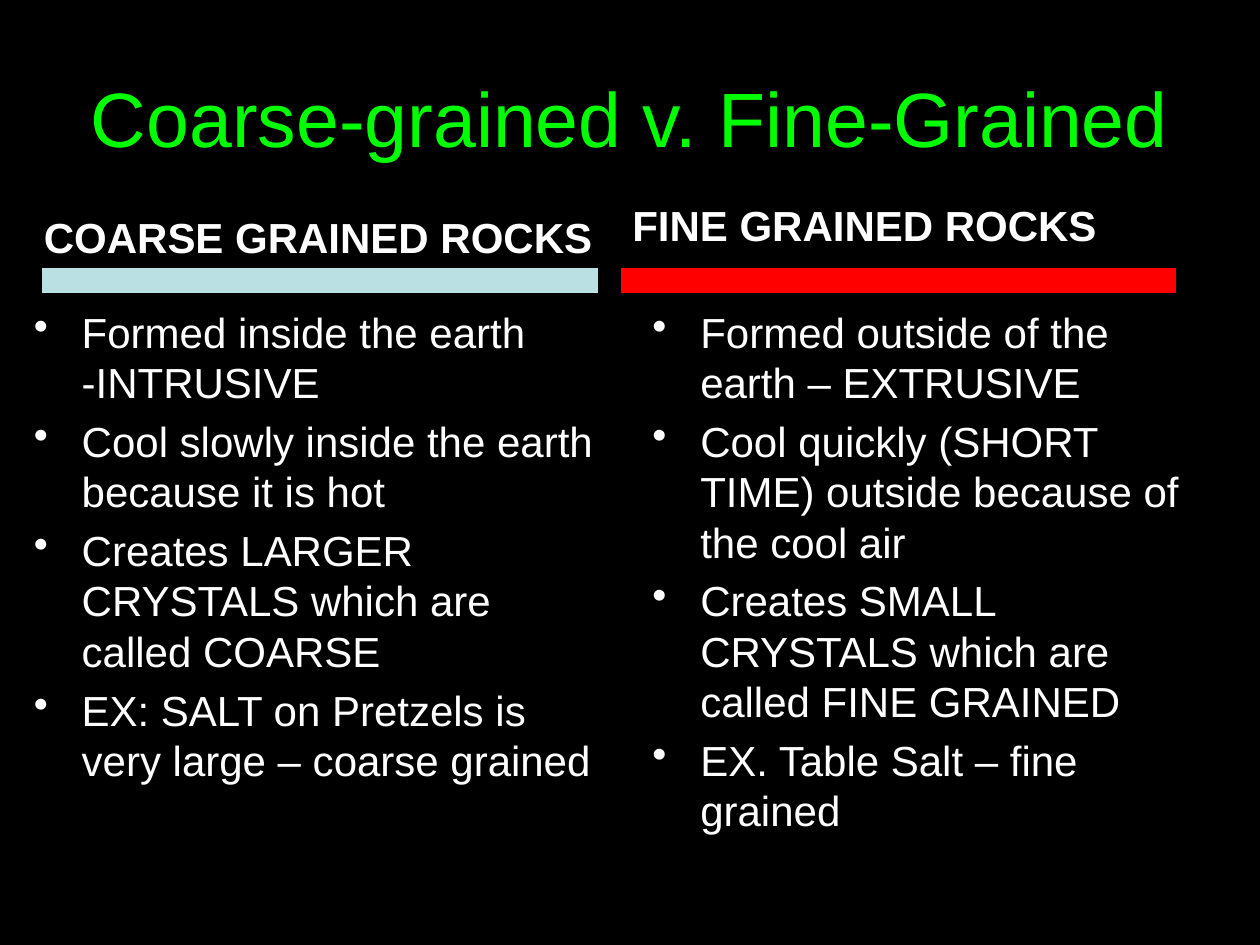
from lxml.etree import SubElement
from pptx import Presentation
from pptx.dml.color import RGBColor
from pptx.enum.shapes import MSO_SHAPE
from pptx.enum.text import MSO_ANCHOR, PP_ALIGN
from pptx.oxml.ns import qn
from pptx.util import Inches, Pt

BLACK = RGBColor(0, 0, 0)
WHITE = RGBColor(255, 255, 255)
GREEN = RGBColor(0, 255, 0)
RED = RGBColor(255, 0, 0)
PALE = RGBColor(0xBB, 0xE0, 0xE3)

COARSE = [
    "Formed inside the earth -INTRUSIVE",
    "Cool slowly inside the earth because it is hot",
    "Creates LARGER CRYSTALS which are called COARSE",
    "EX: SALT on Pretzels is very large – coarse grained",
]
FINE = [
    "Formed outside of the earth – EXTRUSIVE",
    "Cool quickly (SHORT TIME) outside because of the cool air",
    "Creates SMALL CRYSTALS which are called FINE GRAINED",
    "EX. Table Salt – fine grained",
]


class Deck:
    font = "Arial"
    size = 24

    def __init__(self):
        self.prs = Presentation()
        self.prs.slide_width = Inches(10)
        self.prs.slide_height = Inches(7.5)
        self.slide = self.prs.slides.add_slide(self.prs.slide_layouts[5])
        fill = self.slide.background.fill
        fill.solid()
        fill.fore_color.rgb = BLACK

    def style(self, para, size, color, bold=False):
        font = para.font
        font.name = self.font
        font.size = Pt(size)
        font.bold = bold
        font.color.rgb = color

    def title(self, text, box):
        shape = self.slide.shapes.title
        shape.left, shape.top, shape.width, shape.height = map(Inches, box)
        frame = shape.text_frame
        frame.text = text
        frame.vertical_anchor = MSO_ANCHOR.MIDDLE
        para = frame.paragraphs[0]
        para.alignment = PP_ALIGN.CENTER
        self.style(para, 44, GREEN)

    def frame(self, box, anchor):
        frame = self.slide.shapes.add_textbox(*map(Inches, box)).text_frame
        frame.word_wrap = True
        frame.vertical_anchor = anchor
        return frame

    def head(self, text, box):
        frame = self.frame(box, MSO_ANCHOR.BOTTOM)
        frame.text = text
        self.style(frame.paragraphs[0], self.size, WHITE, True)

    def list(self, items, box):
        frame = self.frame(box, MSO_ANCHOR.TOP)
        frame.text = "\n".join(items)
        for para in frame.paragraphs:
            self.style(para, self.size, WHITE)
            para.line_spacing = Pt(28.8)
            para.space_before = Pt(self.size * 0.2)
            props = para._p.get_or_add_pPr()
            props.set("marL", str(Inches(0.38)))
            props.set("indent", str(-Inches(0.38)))
            mark = SubElement(props, qn("a:buChar"))
            mark.set("char", "•")
            props.insert_element_before(mark, "a:tabLst", "a:defRPr", "a:extLst")

    def bar(self, color, box):
        bar = self.slide.shapes.add_shape(MSO_SHAPE.RECTANGLE, *map(Inches, box))
        bar.shadow.inherit = False
        bar.fill.solid()
        bar.fill.fore_color.rgb = color
        bar.line.color.rgb = BLACK
        bar.line.width = Pt(0.75)


def main():
    deck = Deck()
    deck.title("Coarse-grained v. Fine-Grained", (0.5, 0.3, 9, 1.25))
    deck.head("COARSE GRAINED ROCKS", (0.25, 1.43, 4.67, 0.7))
    deck.list(COARSE, (0.17, 2.38, 4.75, 4.32))
    deck.head("FINE GRAINED ROCKS", (4.92, 1.33, 4.42, 0.7))
    deck.list(FINE, (5.08, 2.38, 4.67, 4.32))
    for color, left in ((PALE, 0.33), (RED, 4.92)):
        deck.bar(color, (left, 2.12, 4.42, 0.21))
    deck.prs.save("out.pptx")


if __name__ == "__main__":
    main()
